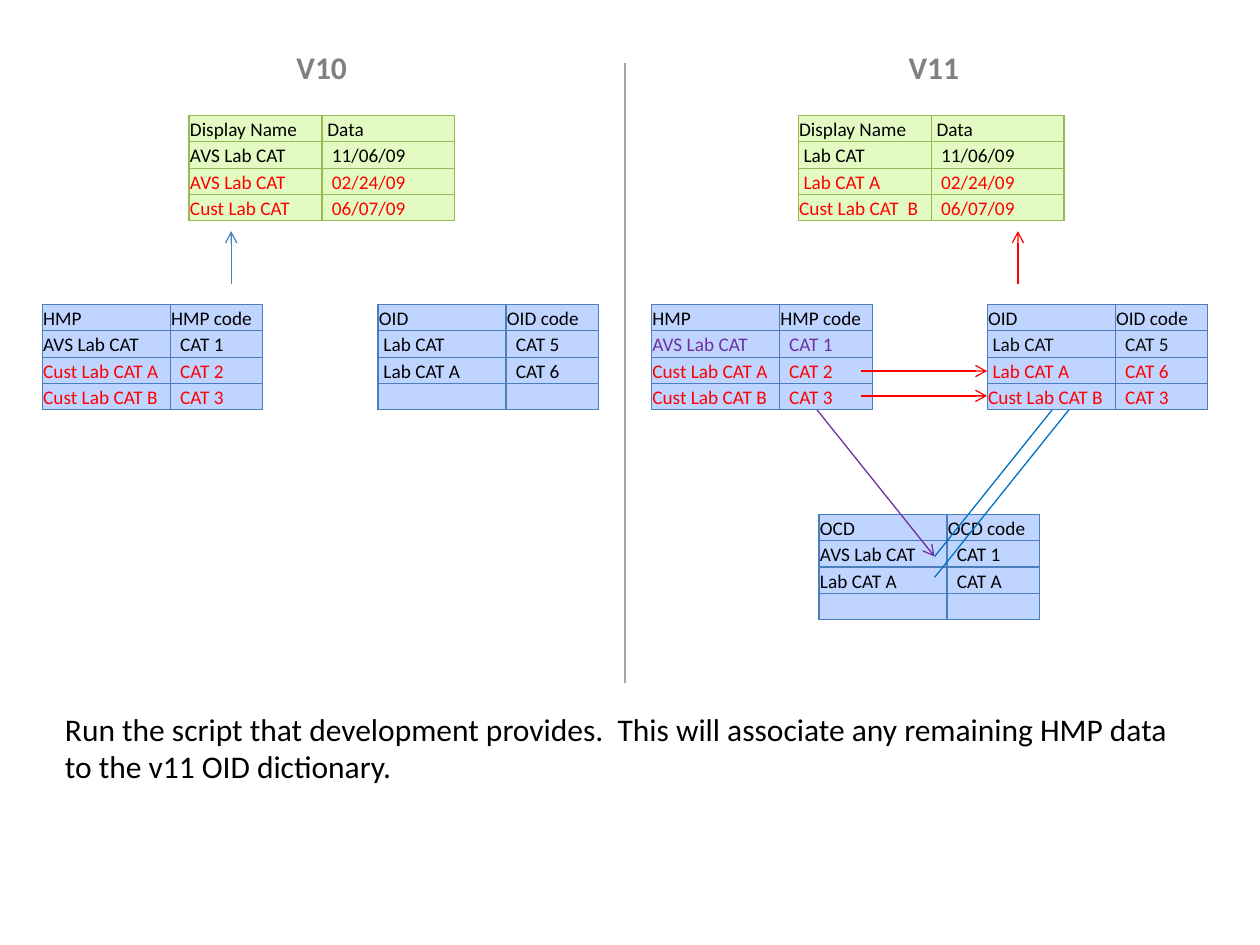
from lxml.etree import SubElement
from pptx import Presentation
from pptx.dml.color import RGBColor
from pptx.enum.shapes import MSO_CONNECTOR as Connector
from pptx.enum.text import MSO_ANCHOR as Anchor, PP_ALIGN as Align
from pptx.oxml.ns import qn
from pptx.util import Cm, Pt

BLACK = RGBColor(0x00, 0x00, 0x00)
NEAR_BLACK = RGBColor(0x0D, 0x0D, 0x0D)
GRAY = RGBColor(0x80, 0x80, 0x80)
LIGHT_GRAY = RGBColor(0xA6, 0xA6, 0xA6)
RED = RGBColor(0xFF, 0x00, 0x00)
PURPLE = RGBColor(0x70, 0x30, 0xA0)
BLUE = RGBColor(0x00, 0x70, 0xC0)
STEEL = RGBColor(0x4B, 0x7E, 0xBC)
PALE_BLUE = RGBColor(0xBF, 0xD4, 0xFF)
GREEN = RGBColor(0x98, 0xB9, 0x55)
PALE_GREEN = RGBColor(0xE3, 0xFB, 0xC2)

FONT = "Calibri"
ROW_HEIGHT = 0.53
INDENT = 0.09  # one step of cell indent
DATA_STYLE = {"widths": (2.68, 2.68), "fill": PALE_GREEN, "border": GREEN}
CODE_STYLE = {"widths": (2.58, 1.87), "fill": PALE_BLUE, "border": STEEL}


def write_text(frame, text, size=11, color=BLACK, bold=False, align=Align.LEFT):
    paragraph = frame.paragraphs[0]
    paragraph.alignment = align
    if not text:  # an empty cell keeps its row height
        SubElement(paragraph._p, qn("a:endParaRPr"), sz=str(size * 100))
        return
    run = paragraph.add_run()
    run.text = text
    run.font.name, run.font.size, run.font.bold = FONT, Pt(size), bold
    run.font.color.rgb = color


def add_text(slide, box, text, **text_format):
    frame = slide.shapes.add_textbox(*map(Cm, box)).text_frame
    frame.word_wrap = True
    write_text(frame, text, **text_format)


def add_line(slide, start, end, color, arrow=True):
    line = slide.shapes.add_connector(Connector.STRAIGHT, *map(Cm, start + end))
    line.line.color.rgb = color
    line.line.width = Pt(0.75)
    if arrow:
        SubElement(line.line._get_or_add_ln(), qn("a:tailEnd"), type="arrow")
    SubElement(line._element.spPr, qn("a:effectLst"))


def add_borders(cell, color):
    properties = cell._tc.get_or_add_tcPr()
    for position, side in enumerate(("lnL", "lnR", "lnT", "lnB")):
        line = SubElement(properties, qn("a:" + side), w=str(Pt(0.75)))
        solid = SubElement(line, qn("a:solidFill"))
        SubElement(solid, qn("a:srgbClr"), val=str(color))
        properties.insert(position, line)  # borders come before the fill


def add_grid(slide, left, top, rows, widths, fill, border):
    """Each row holds name, value, colour, and the indent steps of both."""
    table = slide.shapes.add_table(
        len(rows), 2, Cm(left), Cm(top), Cm(sum(widths)), Cm(ROW_HEIGHT * len(rows))
    ).table
    for column, width in zip(table.columns, widths):
        column.width = Cm(width)
    for row_index, (name, value, color, *steps) in enumerate(rows):
        table.rows[row_index].height = Cm(ROW_HEIGHT)
        for column_index, text in enumerate((name, value)):
            cell = table.cell(row_index, column_index)
            cell.fill.solid()
            cell.fill.fore_color.rgb = fill
            cell.vertical_anchor = Anchor.BOTTOM
            cell.margin_left = Cm(0.02 + INDENT * steps[column_index])
            cell.margin_right = cell.margin_top = Cm(0.02)
            cell.margin_bottom = 0
            add_borders(cell, border)
            write_text(cell.text_frame, text, color=color)


def draw_version(slide, left, title, title_left, arrow_x, arrow_color, data, hmp, oid):
    """One version: title, data table on top, HMP and OID dictionaries below."""
    add_text(slide, (left + title_left, 0.85, 4.23, 1.06), title,
             size=18, color=GRAY, bold=True, align=Align.CENTER)
    header = ("Display Name", "Data", BLACK, 0, 1)
    add_grid(slide, left + 3.81, 2.33, [header] + data, **DATA_STYLE)
    add_line(slide, (left + arrow_x, 5.72), (left + arrow_x, 4.66), arrow_color)
    for offset, name, rows in ((0.85, "HMP", hmp), (7.62, "OID", oid)):
        header = (name, name + " code", BLACK, 0, 0)
        add_grid(slide, left + offset, 6.14, [header] + rows, **CODE_STYLE)


def draw_ocd(slide, left, top):
    """OCD dictionary with its links to HMP and OID above."""
    add_grid(slide, left, top, [
        ("OCD", "OCD code", BLACK, 0, 0),
        ("AVS Lab CAT", "CAT 1", BLACK, 0, 2),
        ("Lab CAT A", "CAT A", BLACK, 0, 2),
        ("", "", BLACK, 0, 0),
    ], **CODE_STYLE)
    hub = (left + 2.33, top + 0.85)
    add_line(slide, (left - 1.06, top - 3.38), hub, PURPLE)
    for drop in (0, 0.42):
        add_line(slide, (hub[0], hub[1] + drop), (left + 5.72, top - 3.38 + drop), BLUE)


def main():
    presentation = Presentation()
    presentation.slide_width, presentation.slide_height = Cm(25.4), Cm(19.05)
    slide = presentation.slides.add_slide(presentation.slide_layouts[6])

    # OCD first, so that its links end behind the dictionaries
    draw_ocd(slide, 16.51, 10.37)

    custom_hmp = [
        ("Cust Lab CAT A", "CAT 2", RED, 0, 2),
        ("Cust Lab CAT B", "CAT 3", RED, 0, 2),
    ]
    draw_version(
        slide, 0, "V10", 4.37, 4.66, STEEL,
        data=[("AVS Lab CAT", "11/06/09", BLACK, 0, 2),
              ("AVS Lab CAT", "02/24/09", RED, 0, 2),
              ("Cust Lab CAT", "06/07/09", RED, 0, 2)],
        hmp=[("AVS Lab CAT", "CAT 1", BLACK, 0, 2)] + custom_hmp,
        oid=[("Lab CAT", "CAT 5", BLACK, 1, 2),
             ("Lab CAT A", "CAT 6", BLACK, 1, 2),
             ("", "", BLACK, 0, 0)],
    )
    draw_version(
        slide, 12.28, "V11", 4.43, 8.24, RED,
        data=[("Lab CAT", "11/06/09", BLACK, 1, 2),
              ("Lab CAT A", "02/24/09", RED, 1, 2),
              ("Cust Lab CAT  B", "06/07/09", RED, 0, 2)],
        hmp=[("AVS Lab CAT", "CAT 1", PURPLE, 0, 2)] + custom_hmp,
        oid=[("Lab CAT", "CAT 5", NEAR_BLACK, 1, 2),
             ("Lab CAT A", "CAT 6", RED, 1, 2),
             ("Cust Lab CAT B", "CAT 3", RED, 0, 2)],
    )

    # HMP rows carried over to OID
    for y in (7.48, 7.98):
        add_line(slide, (17.35, y), (19.9, y), RED)

    # Divider and instruction
    add_line(slide, (12.6, 1.27), (12.6, 13.76), LIGHT_GRAY, arrow=False)
    add_text(slide, (1.06, 14.18, 22.86, 1.8),
             "Run the script that development provides.  This will associate "
             "any remaining HMP data to the v11 OID dictionary.", size=18)

    presentation.save("out.pptx")


if __name__ == "__main__":
    main()
